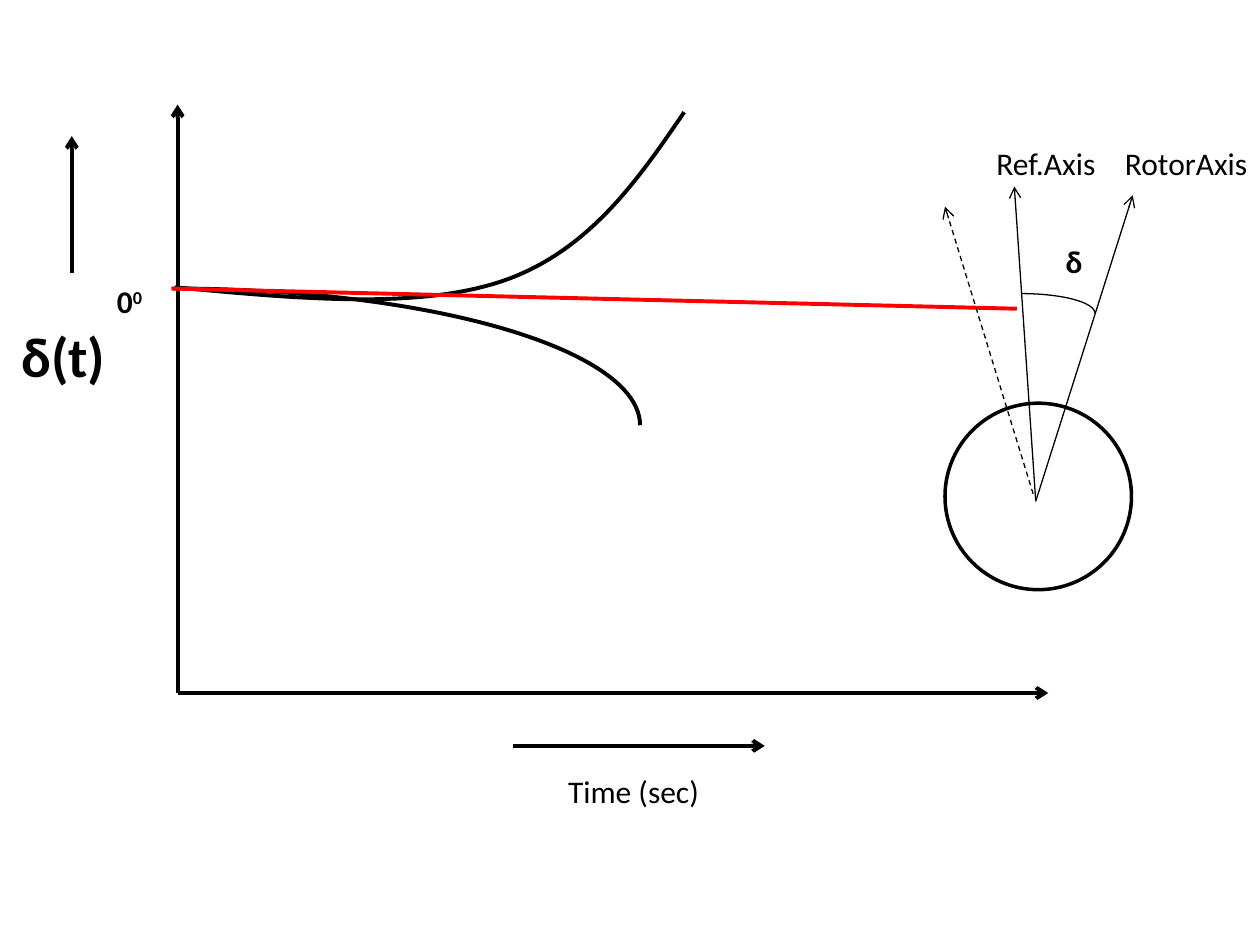
import pptx
import pptx.util
import pptx.dml.color
import pptx.enum.dml
import pptx.enum.shapes
import pptx.oxml
import pptx.oxml.ns

BLACK = pptx.dml.color.RGBColor(0x00, 0x00, 0x00)
RED = pptx.dml.color.RGBColor(0xFF, 0x00, 0x00)
WHITE = pptx.dml.color.RGBColor(0xFF, 0xFF, 0xFF)
FONT = "Calibri"
NS = pptx.oxml.ns.nsdecls("a")

prs = pptx.Presentation()
prs.slide_width = pptx.util.Inches(10)
prs.slide_height = pptx.util.Inches(7.5)
COL = prs.slide_width / 10  # grid of 10 columns by 7.5 rows
ROW = prs.slide_height / 7.5
s = prs.slides.add_slide(prs.slide_layouts[6])


def add_text(text, x, y, w, h, size=18, bold=False, superscript=""):
    tb = s.shapes.add_textbox(int(x * COL), int(y * ROW), int(w * COL), int(h * ROW))
    tf = tb.text_frame
    tf.word_wrap = True
    p = tf.paragraphs[0]
    for part in filter(None, (text, superscript)):
        r = p.add_run()
        r.text = part
        r.font.name = FONT
        r.font.size = pptx.util.Pt(size)
        r.font.bold = bold
        r.font.color.rgb = BLACK
    if superscript:
        r.font._element.set("baseline", "30000")


def add_line(x1, y1, x2, y2, width=2.25, color=BLACK, arrow=True, dashed=False):
    cx = s.shapes.add_connector(
        pptx.enum.shapes.MSO_CONNECTOR.STRAIGHT,
        int(x1 * COL), int(y1 * ROW), int(x2 * COL), int(y2 * ROW))
    cx.line.color.rgb = color
    cx.line.width = pptx.util.Pt(width)
    if dashed:
        cx.line.dash_style = pptx.enum.dml.MSO_LINE.DASH
    if arrow:
        cx.line._get_or_add_ln().append(
            pptx.oxml.parse_xml(f'<a:tailEnd {NS} type="arrow"/>'))
    cx._element.spPr.append(pptx.oxml.parse_xml(f"<a:effectLst {NS}/>"))


# Graph axes
add_line(1.41, 5.5, 8.32, 5.5)
add_line(1.41, 5.5, 1.41, 0.83)

# Rising curve: a chain of cubic Bezier segments, sampled evenly
SEGMENTS = [
    ((1.39, 2.28), (2.35, 2.37), (3.31, 2.46), (3.99, 2.23)),
    ((3.99, 2.23), (4.66, 2.0), (5.05, 1.45), (5.43, 0.89)),
]
STEPS = 30
points = []
for a, b, c, d in SEGMENTS:
    for i in range(1, STEPS + 1):
        t = i / STEPS
        u = 1 - t
        points.append(tuple(
            u**3 * a[k] + 3 * u**2 * t * b[k] + 3 * u * t**2 * c[k] + t**3 * d[k]
            for k in (0, 1)))
start = SEGMENTS[0][0]
fb = s.shapes.build_freeform(int(start[0] * COL), int(start[1] * ROW))
fb.add_line_segments([(int(x * COL), int(y * ROW)) for x, y in points], close=False)
rising = fb.convert_to_shape()
rising.shadow.inherit = False
rising.fill.background()
rising.line.color.rgb = BLACK
rising.line.width = pptx.util.Pt(2.25)

# Falling curve, rotor and angle mark
ARC = pptx.enum.shapes.MSO_SHAPE.ARC
OVAL = pptx.enum.shapes.MSO_SHAPE.OVAL
for kind, x, y, w, h, width in [
    (ARC, -2.34, 2.29, 7.42, 2.17, 2.25),
    (OVAL, 7.5, 3.2, 1.48, 1.48, 2),
    (ARC, 7.52, 2.33, 1.17, 0.31, 0.75),
]:
    sp = s.shapes.add_shape(kind, int(x * COL), int(y * ROW), int(w * COL), int(h * ROW))
    sp.shadow.inherit = False
    if kind == OVAL:
        sp.fill.solid()
        sp.fill.fore_color.rgb = WHITE
    else:
        sp.fill.background()
    sp.line.color.rgb = BLACK
    sp.line.width = pptx.util.Pt(width)

# Steady line and direction arrows
add_line(1.36, 2.29, 8.07, 2.45, color=RED, arrow=False)
add_line(0.57, 2.17, 0.57, 1.08)
add_line(4.07, 5.92, 6.07, 5.92)

# Reference axis, rotor axis and the opposite swing
add_line(8.22, 3.97, 8.05, 1.48, width=0.75)
add_line(8.22, 3.98, 8.99, 1.55, width=0.75)
add_line(8.2, 3.92, 7.5, 1.64, width=0.75, dashed=True)

# Labels
add_text("Time (sec)", 4.41, 6.08, 2.08, 0.4)
add_text("δ(t)", 0.07, 2.5, 0.92, 0.64, size=32, bold=True)
add_text("0", 0.83, 2.19, 0.47, 0.4, bold=True, superscript="0")
add_text("Ref.Axis", 7.81, 1.09, 1.02, 0.4)
add_text("RotorAxis", 8.83, 1.09, 1.25, 0.4)
add_text("δ", 8.36, 1.87, 0.63, 0.4, bold=True)

prs.save("out.pptx")
